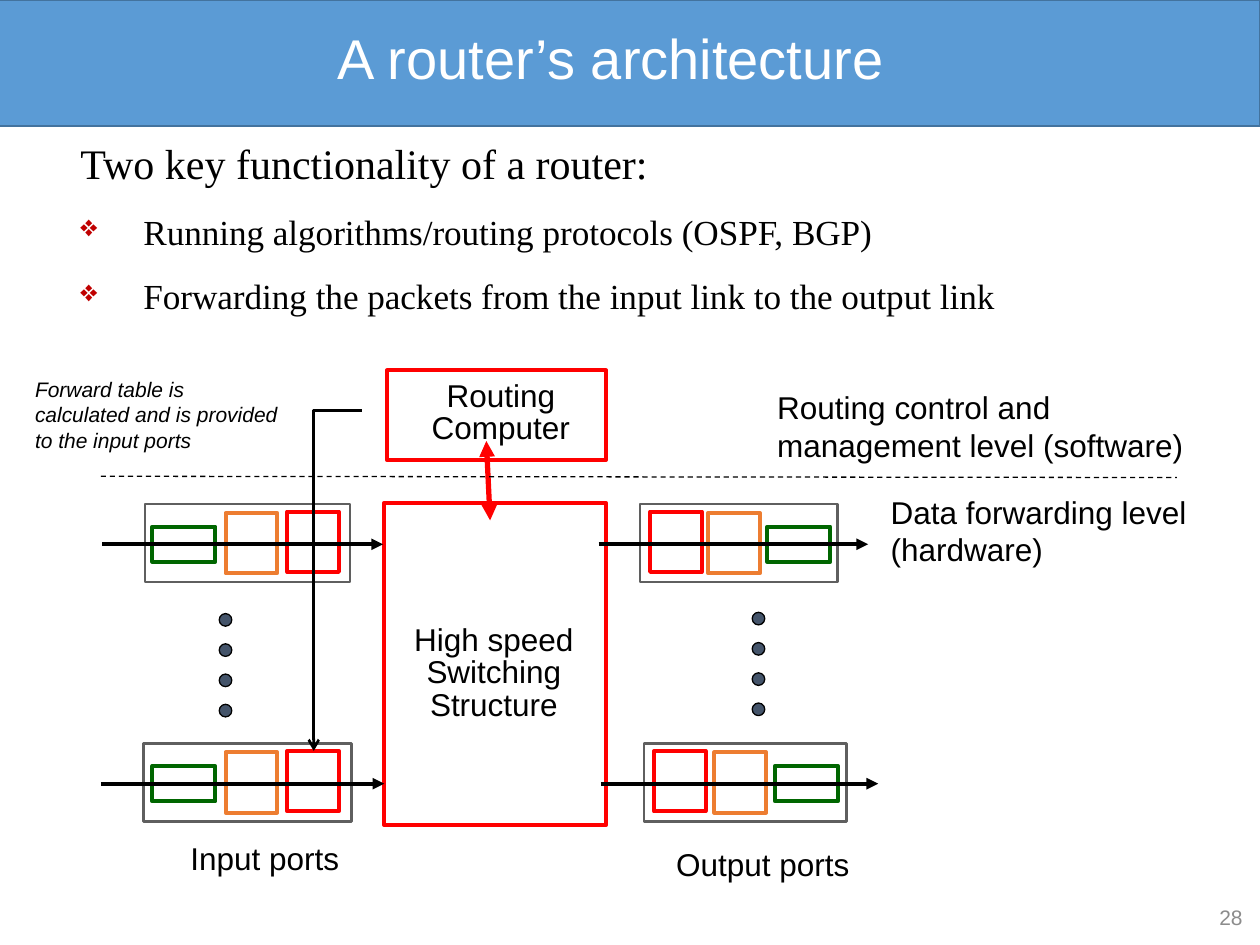
"""Build the slide on a router's architecture."""
from dataclasses import dataclass

from lxml.etree import SubElement
from pptx import Presentation
from pptx.dml.color import RGBColor
from pptx.enum.dml import MSO_LINE
from pptx.enum.shapes import MSO_CONNECTOR, MSO_SHAPE
from pptx.enum.text import MSO_ANCHOR, PP_ALIGN
from pptx.oxml.ns import qn
from pptx.util import Inches, Pt

WHITE = RGBColor(0xFF, 0xFF, 0xFF)
BLACK = RGBColor(0, 0, 0)
BLUE = RGBColor(0x5B, 0x9B, 0xD5)
NAVY = RGBColor(0x43, 0x73, 0x9E)
SLATE = RGBColor(0x44, 0x54, 0x6A)
RED = RGBColor(0xFF, 0, 0)
ORANGE = RGBColor(0xED, 0x7D, 0x31)
GREEN = RGBColor(0, 0x66, 0)
GRAY = RGBColor(0x5F, 0x5F, 0x5F)
LIGHT_GRAY = RGBColor(0x8C, 0x8C, 0x8C)
DARK_RED = "C00000"


@dataclass
class Port:
    left: float
    top: float
    width: float
    green: float
    orange: float
    red: float
    arrow_start: float
    arrow_end: float


@dataclass
class Label:
    box: tuple[float, float, float, float]
    lines: tuple[str, ...]
    size: float = 18
    color: RGBColor = BLACK
    align: PP_ALIGN = PP_ALIGN.LEFT
    spacing: float = 1.0
    italic: bool = False
    wrap: bool = True
    anchor: MSO_ANCHOR = MSO_ANCHOR.TOP


PORTS = (
    Port(1.15, 4.0, 1.63, 1.21, 1.79, 2.28, 0.81, 3.04),
    Port(1.14, 5.9, 1.65, 1.21, 1.79, 2.28, 0.8, 3.05),
    Port(5.08, 4.0, 1.57, 6.09, 5.62, 5.16, 4.75, 6.89),
    Port(5.11, 5.9, 1.61, 6.15, 5.67, 5.19, 4.77, 6.97),
)

LABELS = (
    Label((0.6, 0.15, 8.5, 0.67), ("A router’s architecture",), 32, WHITE,
          PP_ALIGN.CENTER, 0.9, anchor=MSO_ANCHOR.MIDDLE),
    Label((3.18, 4.92, 1.48, 0.87), ("High speed", "Switching", "Structure"),
          align=PP_ALIGN.CENTER, spacing=0.85, wrap=False),
    Label((3.12, 2.98, 1.71, 0.62), ("Routing", "Computer"),
          align=PP_ALIGN.CENTER, spacing=0.85),
    Label((1.4, 6.61, 1.39, 0.4), ("Input ports",), align=PP_ALIGN.RIGHT, wrap=False),
    Label((5.25, 6.66, 1.59, 0.4), ("Output ports",), align=PP_ALIGN.RIGHT, wrap=False),
    Label((6.97, 3.86, 2.65, 0.71), ("Data forwarding level", "(hardware)")),
    Label((6.07, 3.03, 3.82, 0.71), ("Routing control and management level (software)",)),
    Label((0.18, 2.94, 2.17, 0.71),
          ("Forward table is calculated and is provided to the input ports",),
          12, italic=True),
    Label((9.24, 7.1, 0.72, 0.36), ("28",), 12, LIGHT_GRAY, PP_ALIGN.RIGHT,
          anchor=MSO_ANCHOR.MIDDLE),
)


def add_box(s, left: float, top: float, width: float, height: float, line: RGBColor,
            weight: float, fill: RGBColor = WHITE, kind=MSO_SHAPE.RECTANGLE):
    """Add a filled and outlined preset shape."""
    sp = s.shapes.add_shape(kind, Inches(left), Inches(top), Inches(width), Inches(height))
    sp.shadow.inherit = False
    sp.fill.solid()
    sp.fill.fore_color.rgb = fill
    sp.line.color.rgb = line
    sp.line.width = Pt(weight)
    return sp


def add_line(s, start: tuple[float, float], end: tuple[float, float], color: RGBColor,
             weight: float, head: str = "", tail: str = "", kind=MSO_CONNECTOR.STRAIGHT):
    """Add a connector with optional arrowheads."""
    cx = s.shapes.add_connector(kind, *map(Inches, (*start, *end)))
    cx.line.color.rgb = color
    cx.line.width = Pt(weight)
    ln = cx.line._get_or_add_ln()
    for tag, arrow in (("a:headEnd", head), ("a:tailEnd", tail)):
        if arrow:
            SubElement(ln, qn(tag), type=arrow)
    SubElement(cx._element.spPr, qn("a:effectLst"))
    return cx


def add_run(p, text: str, size: float, font: str, color: RGBColor, italic: bool = False):
    """Add one formatted run to a paragraph."""
    r = p.add_run()
    r.text = text
    r.font.size = Pt(size)
    r.font.name = font
    r.font.color.rgb = color
    r.font.italic = italic


def add_frame(s, box: tuple[float, float, float, float], wrap: bool = True):
    """Add a text box and return its text frame."""
    tf = s.shapes.add_textbox(*map(Inches, box)).text_frame
    tf.word_wrap = wrap
    return tf


def add_label(s, label: Label):
    """Add a label with one paragraph per line."""
    tf = add_frame(s, label.box, label.wrap)
    tf.vertical_anchor = label.anchor
    for i, text in enumerate(label.lines):
        p = tf.add_paragraph() if i else tf.paragraphs[0]
        p.alignment = label.align
        p.line_spacing = label.spacing
        add_run(p, text, label.size, "Arial", label.color, label.italic)


def add_body(s, heading: str, bullets: tuple[str, ...]):
    """Add the heading and its bulleted list."""
    tf = add_frame(s, (0.54, 1.15, 8.56, 1.42))
    for i, text in enumerate((heading, *bullets)):
        p = tf.add_paragraph() if i else tf.paragraphs[0]
        p.line_spacing = 0.7
        p.space_before = p.space_after = Pt(10)
        pPr = p._p.get_or_add_pPr()
        pPr.set("marL", str(Inches(0.5)))
        pPr.set("indent", str(Inches(-0.5)))
        if i:
            SubElement(SubElement(pPr, qn("a:buClr")), qn("a:srgbClr"), val=DARK_RED)
            SubElement(pPr, qn("a:buSzPct"), val="85000")
            SubElement(pPr, qn("a:buChar"), char="❖")
        else:
            SubElement(pPr, qn("a:buNone"))
        add_run(p, text, 20.1 if i else 24, "Times New Roman", BLACK)


def add_port(s, port: Port):
    """Add a port with its three stages and the arrow through them."""
    add_box(s, port.left, port.top, port.width, 0.62, GRAY, 1.5)
    add_box(s, port.green, port.top + 0.18, 0.5, 0.28, GREEN, 2.25)
    add_box(s, port.orange, port.top + 0.07, 0.41, 0.48, ORANGE, 2.25)
    add_box(s, port.red, port.top + 0.06, 0.41, 0.48, RED, 2.25)
    y = port.top + 0.32
    add_line(s, (port.arrow_start, y), (port.arrow_end, y), BLACK, 2.25, tail="triangle")


def add_table_feed(s):
    """Add the elbow arrow that carries the forward table to the input ports."""
    cx = add_line(s, (1.33, 4.42), (4.03, 4.8), BLACK, 1.5, tail="arrow",
                  kind=MSO_CONNECTOR.ELBOW)
    spPr = cx._element.spPr
    spPr.find(qn("a:xfrm")).set("rot", str(90 * 60000))
    guides = spPr.find(qn("a:prstGeom")).get_or_add_avLst()
    SubElement(guides, qn("a:gd"), name="adj1", fmla="val 0")


def main():
    """Draw the slide and save it."""
    prs = Presentation()
    prs.slide_width, prs.slide_height = Inches(10), Inches(7.5)
    s = prs.slides.add_slide(prs.slide_layouts[6])
    add_box(s, -0.02, 0, 10.02, 1, NAVY, 1, BLUE)
    add_body(s, "Two key functionality of a router:", (
        "Running algorithms/routing protocols (OSPF, BGP)",
        "Forwarding the packets from the input link to the output link"))
    add_box(s, 3.05, 3.99, 1.76, 2.56, RED, 2.25)
    add_box(s, 3.07, 2.94, 1.74, 0.71, RED, 2.25)
    add_line(s, (3.86, 3.5), (3.89, 4.13), RED, 3, "triangle", "triangle")
    for port in PORTS:
        add_port(s, port)
    for left, top in ((1.74, 4.87), (5.97, 4.86)):
        for i in range(4):
            add_box(s, left, top + i * 0.24, 0.1, 0.1, BLACK, 0.75, SLATE, MSO_SHAPE.OVAL)
    divider = add_line(s, (0.8, 3.78), (9.34, 3.79), BLACK, 0.75)
    divider.line.dash_style = MSO_LINE.DASH
    add_table_feed(s)
    for label in LABELS:
        add_label(s, label)
    prs.save("out.pptx")


if __name__ == "__main__":
    main()
